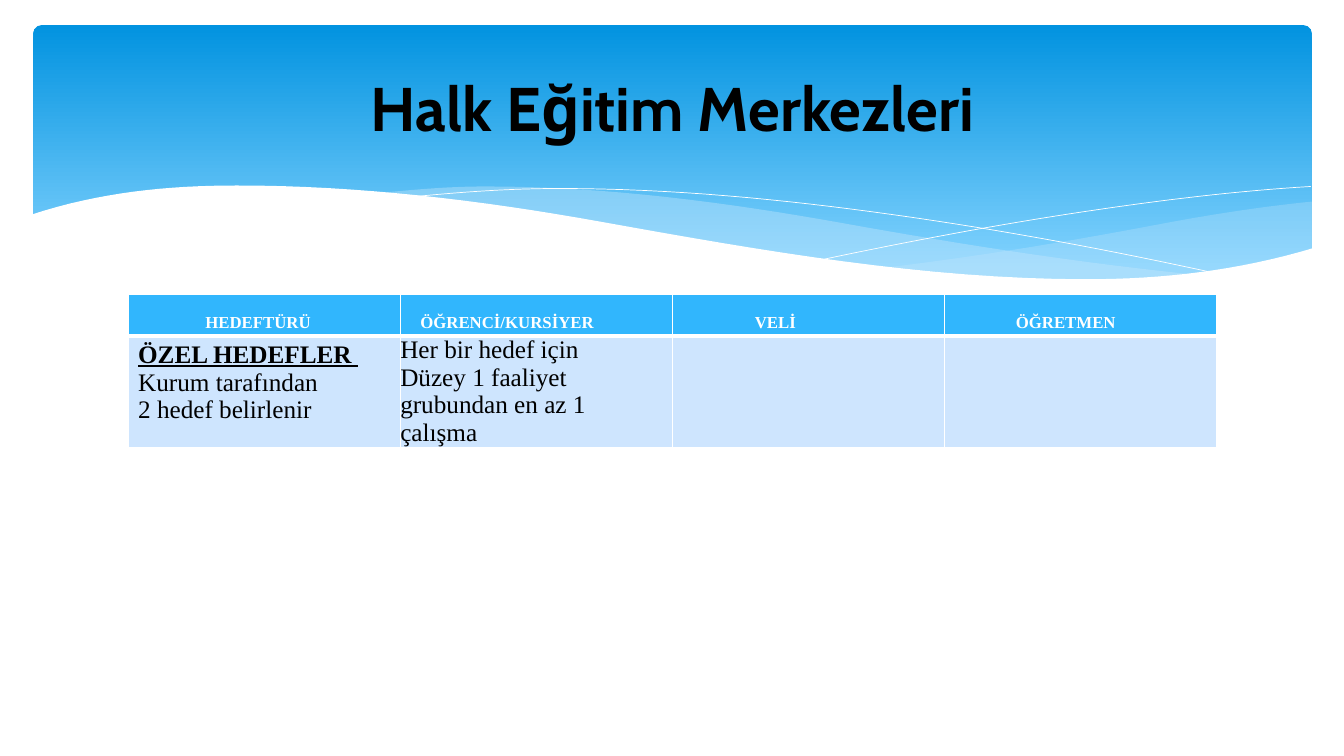
from itertools import pairwise
from lxml.etree import SubElement
from pptx import Presentation
from pptx.dml.color import RGBColor
from pptx.enum.shapes import MSO_SHAPE as Preset
from pptx.enum.text import MSO_ANCHOR as Anchor, PP_ALIGN as Align
from pptx.oxml.ns import qn
from pptx.util import Inches, Pt

WHITE, BLACK = "FFFFFF", "000000"
HEADER_BLUE, BODY_BLUE, WAVE_BLUE = "31B6FD", "CEE5FE", "C6E7FC"
TABLE_FONT = "Times New Roman"
STEPS = 16  # straight pieces between two knots of a wave

# Each wave edge runs left to right through knots: x, y and slope, in inches.
# A slope of 0 marks a crest or a trough.
RIGHT_WAVE_TOP = [(8.82, 2.65, -0.12), (11.47, 2.23, -0.19), (13.01, 2, -0.1)]
RIGHT_WAVE_BOTTOM = [(8.82, 2.65, 0.1), (10.78, 2.78, 0), (13.01, 2.47, -0.29)]
MIDDLE_WAVE_TOP = [(3.82, 1.91, -0.1), (4.82, 1.85, 0),
                   (8.39, 2.22, 0.18), (11.9, 2.73, 0.1)]
MIDDLE_WAVE_BOTTOM = [(3.82, 1.91, 0.1), (5.99, 2.22, 0.18),
                      (10.9, 2.78, 0), (11.9, 2.73, -0.08)]
FALLING_CURVE = [(4.12, 1.95, -0.1), (5.55, 1.87, 0),
                 (8.86, 2.13, 0.14), (12.1, 2.72, 0.22)]
RISING_CURVE = [(8.18, 2.57, -0.21), (10.75, 2.1, -0.15), (13, 1.85, -0.06)]
WHITE_WAVE_TOP = [(0.31, 2.13, -0.33), (2.35, 1.84, 0), (5.96, 2.2, 0.18),
                  (10.78, 2.77, 0), (13.03, 2.46, -0.3)]
WHITE_WAVE_BOTTOM = [(0.31, 3.29, 0), (13.03, 3.29, 0)]

# Header text with the right inset that shifts it left of its column's middle
HEADERS = [("HEDEFTÜRÜ", 0.12), ("ÖĞRENCİ/KURSİYER", 0.58),
           ("VELİ", 0.66), ("ÖĞRETMEN", 0.3)]
GOALS = ["ÖZEL HEDEFLER ", "Kurum tarafından", "2 hedef belirlenir"]
STUDENT_WORK = ["Her bir hedef için",
                "Düzey 1 faaliyet grubundan en az 1 çalışma"]


def color(value):
    return RGBColor.from_string(value)


def smooth(knots):
    """Return points on the cubic Hermite curve through the knots."""
    points = [knots[0][:2]]
    for (x0, y0, slope0), (x1, y1, slope1) in pairwise(knots):
        span = x1 - x0
        for step in range(1, STEPS + 1):
            t = step / STEPS
            blend = t * t * (3 - 2 * t)
            bend = t * (1 - t) * ((1 - t) * slope0 - t * slope1)
            points.append((x0 + span * t, y0 + (y1 - y0) * blend + span * bend))
    return points


def add_banner(shapes):
    banner = shapes.add_shape(Preset.ROUNDED_RECTANGLE, Inches(0.33), Inches(0.25),
                              Inches(12.68), Inches(2.7))
    banner.adjustments[0] = 0.03
    banner.shadow.inherit = False
    banner.line.fill.background()
    banner.fill.gradient()
    banner.fill.gradient_angle = 270
    stops = zip(banner.fill.gradient_stops, [(0, "0293E0"), (0.9, "83D3FE")])
    for stop, (position, value) in stops:
        stop.position = position
        stop.color.rgb = color(value)


def add_outline(shapes, points, closed):
    start, *rest = [(Inches(x), Inches(y)) for x, y in points]
    builder = shapes.build_freeform(*start)
    builder.add_line_segments(rest, close=closed)
    outline = builder.convert_to_shape()
    outline.shadow.inherit = False
    return outline


def add_wave(shapes, top, bottom, fill, opacity=100):
    """Fill the area between two edges."""
    wave = add_outline(shapes, smooth(top) + smooth(bottom)[::-1], True)
    wave.line.fill.background()
    wave.fill.solid()
    wave.fill.fore_color.rgb = color(fill)
    if opacity < 100:
        tint = wave._element.spPr.find(".//" + qn("a:srgbClr"))
        SubElement(tint, qn("a:alpha"), val=str(opacity * 1000))


def add_curve(shapes, knots):
    curve = add_outline(shapes, smooth(knots), False)
    curve.fill.background()
    curve.line.color.rgb = color(WHITE)
    curve.line.width = Pt(0.5)


def style_cell(cell, fill, bottom_width):
    """Draw white borders, then fill the cell."""
    properties = cell._tc.get_or_add_tcPr()
    for side, width in zip("LRTB", (1, 1, 1, bottom_width)):
        border = SubElement(properties, qn("a:ln" + side), w=str(Pt(width)))
        paint = SubElement(border, qn("a:solidFill"))
        SubElement(paint, qn("a:srgbClr"), val=WHITE)
    cell.fill.solid()
    cell.fill.fore_color.rgb = color(fill)


def write_cell(cell, lines, size, text_color, insets, bold=False):
    """Fill a cell; insets run left, top, right, bottom."""
    (cell.margin_left, cell.margin_top,
     cell.margin_right, cell.margin_bottom) = map(Inches, insets)
    cell.text = "\n".join(lines)
    for paragraph in cell.text_frame.paragraphs:
        font = paragraph.font
        font.name, font.size, font.bold = TABLE_FONT, Pt(size), bold
        font.color.rgb = color(text_color)


def add_goal_table(shapes):
    table = shapes.add_table(2, len(HEADERS), Inches(1.27), Inches(2.92),
                             Inches(10.8), Inches(1.51)).table
    table.horz_banding = False
    table.rows[0].height, table.rows[1].height = Inches(0.41), Inches(1.1)
    for column, (header, shift) in enumerate(HEADERS):
        heading = table.cell(0, column)
        style_cell(heading, HEADER_BLUE, 3)
        write_cell(heading, [header], 12, WHITE, (0, 0, shift, 0.03), bold=True)
        heading.vertical_anchor = Anchor.BOTTOM
        heading.text_frame.paragraphs[0].alignment = Align.CENTER
        style_cell(table.cell(1, column), BODY_BLUE, 1)
    goals = table.cell(1, 0)
    write_cell(goals, GOALS, 18, BLACK, (0.1, 0.05, 0.1, 0.05))
    goal_title = goals.text_frame.paragraphs[0].font
    goal_title.bold = goal_title.underline = True
    write_cell(table.cell(1, 1), STUDENT_WORK, 18, BLACK, (0, 0, 0.1, 0))


def set_title(shapes, text):
    title = shapes.title
    title.left, title.top = Inches(0.67), Inches(0.37)
    title.width, title.height = Inches(12), Inches(1.37)
    title.text = text
    title.text_frame.vertical_anchor = Anchor.MIDDLE
    paragraph = title.text_frame.paragraphs[0]
    paragraph.alignment = Align.CENTER
    font = paragraph.font
    font.name, font.size, font.bold = "Cabin", Pt(44), True
    font.color.rgb = color(BLACK)
    shapes._spTree.append(title._element)  # bring in front of the banner


def main():
    deck = Presentation()
    deck.slide_width, deck.slide_height = Inches(13.33), Inches(7.5)
    shapes = deck.slides.add_slide(deck.slide_layouts[5]).shapes
    add_banner(shapes)
    add_wave(shapes, RIGHT_WAVE_TOP, RIGHT_WAVE_BOTTOM, WAVE_BLUE, 29)
    add_wave(shapes, MIDDLE_WAVE_TOP, MIDDLE_WAVE_BOTTOM, WAVE_BLUE, 40)
    for knots in (FALLING_CURVE, RISING_CURVE):
        add_curve(shapes, knots)
    add_wave(shapes, WHITE_WAVE_TOP, WHITE_WAVE_BOTTOM, WHITE)
    add_goal_table(shapes)
    set_title(shapes, "Halk Eğitim Merkezleri")
    deck.save("out.pptx")


if __name__ == "__main__":
    main()
